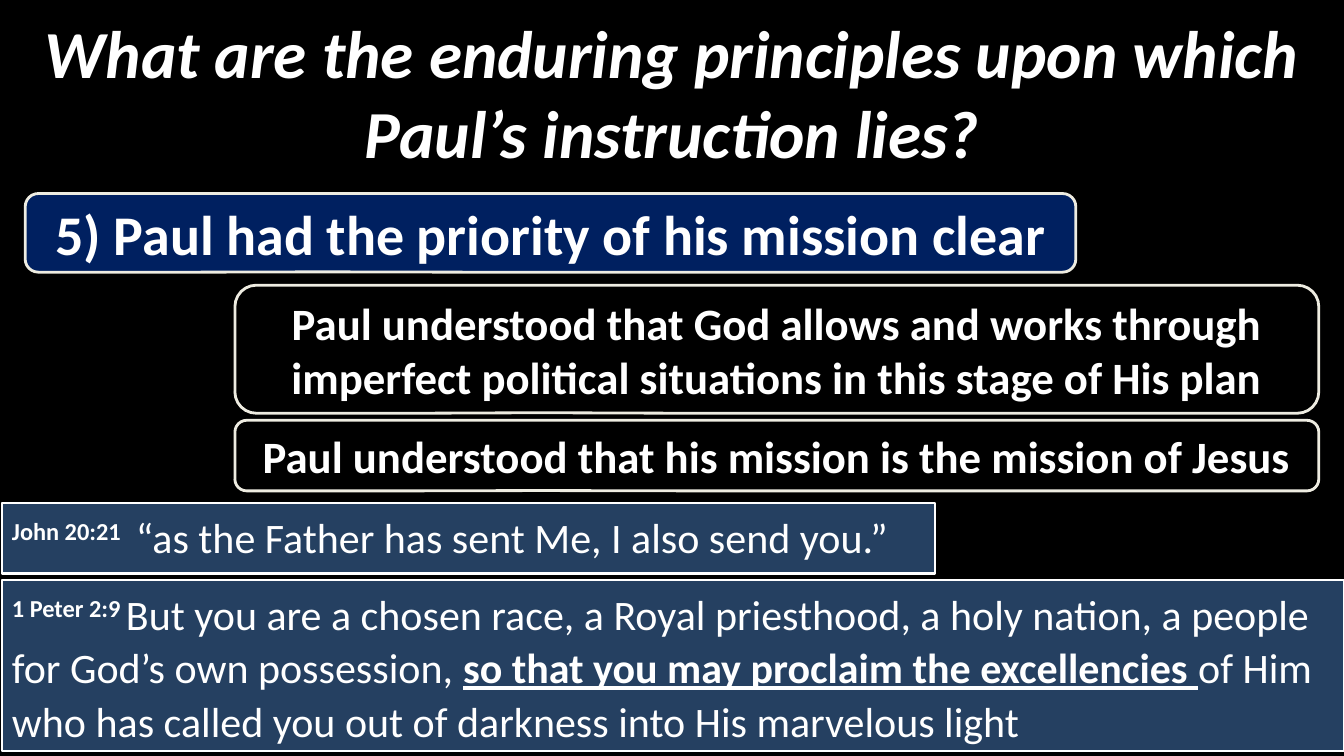
from dataclasses import dataclass

from lxml import etree
from pptx import Presentation
from pptx.dml.color import RGBColor
from pptx.enum.shapes import MSO_SHAPE
from pptx.enum.text import MSO_ANCHOR, PP_ALIGN
from pptx.oxml.ns import qn
from pptx.util import Inches, Pt

CALLOUT = MSO_SHAPE.ROUNDED_RECTANGULAR_CALLOUT
RECTANGLE = MSO_SHAPE.RECTANGLE
MIDDLE, TOP = MSO_ANCHOR.MIDDLE, MSO_ANCHOR.TOP
CENTER, LEFT = PP_ALIGN.CENTER, PP_ALIGN.LEFT


@dataclass(frozen=True)
class Theme:
    """Colours, font and type sizes of the slide."""
    font: str = "Calibri"
    black: RGBColor = RGBColor(0, 0, 0)
    white: RGBColor = RGBColor(255, 255, 255)
    navy: RGBColor = RGBColor(0x00, 0x20, 0x60)
    slate: RGBColor = RGBColor(0x25, 0x40, 0x61)
    cream: RGBColor = RGBColor(0xEE, 0xEC, 0xE1)
    title_size: int = 48
    principle_size: int = 40
    point_size: int = 32
    verse_size: int = 30


THEME = Theme()


def style_paragraph(paragraph, size, align):
    """Give a paragraph the theme font, white colour, size and alignment."""
    paragraph.alignment = align
    paragraph.font.name = THEME.font
    paragraph.font.size = Pt(size)
    paragraph.font.color.rgb = THEME.white


def add_panel(slide, kind, box, fill, line, line_width):
    """Add a filled, outlined shape without shadow."""
    panel = slide.shapes.add_shape(kind, *map(Inches, box))
    panel.shadow.inherit = False
    panel.fill.solid()
    panel.fill.fore_color.rgb = fill
    panel.line.color.rgb = line
    panel.line.width = Pt(line_width)
    panel.text_frame.word_wrap = True
    return panel


def add_title(slide, box, wording):
    """Add the bold italic question at the top."""
    frame = slide.shapes.add_textbox(*map(Inches, box)).text_frame
    frame.word_wrap = True
    frame.vertical_anchor = MIDDLE
    question = frame.paragraphs[0]
    question.text = wording
    style_paragraph(question, THEME.title_size, CENTER)
    question.font.bold = question.font.italic = True


def add_statement(slide, box, wording, size, fill, opacity=100):
    """Add a rounded callout with one bold centred statement."""
    callout = add_panel(slide, CALLOUT, box, fill, THEME.cream, 2)
    for index, value in enumerate((-0.219, 0.496, 0.167)):
        callout.adjustments[index] = value
    if opacity < 100:
        color = callout.fill._xPr.find(qn("a:solidFill"))[0]
        etree.SubElement(color, qn("a:alpha"), val=str(opacity * 1000))
    callout.text_frame.vertical_anchor = MIDDLE
    statement = callout.text_frame.paragraphs[0]
    statement.text = wording
    style_paragraph(statement, size, CENTER)
    statement.font.bold = True


def add_verse(slide, box, reference, passages):
    """Add a verse with a raised reference; passages are (wording, stressed) pairs."""
    panel = add_panel(slide, RECTANGLE, box, THEME.slate, THEME.white, 1.5)
    panel.text_frame.vertical_anchor = TOP
    verse = panel.text_frame.paragraphs[0]
    style_paragraph(verse, THEME.verse_size, LEFT)
    verse.line_spacing = 1.07
    citation = verse.add_run()
    citation.text = reference
    citation.font.bold = True
    citation.font._element.set("baseline", "30000")
    for wording, stressed in passages:
        passage = verse.add_run()
        passage.text = wording
        passage.font.bold = passage.font.underline = stressed


def build_slide(slide):
    """Place the title, the principle, its points and the verses."""
    slide.background.fill.solid()
    slide.background.fill.fore_color.rgb = THEME.black
    add_title(slide, (0, 0.42, 13.33, 0.98),
              "What are the enduring principles upon which Paul’s instruction lies?")
    add_statement(slide, (0.25, 1.92, 10.42, 0.78),
                  "5) Paul had the priority of his mission clear",
                  THEME.principle_size, THEME.navy)
    points = (
        (2.83, 1.27, "Paul understood that God allows and works through "
                     "imperfect political situations in this stage of His plan"),
        (4.17, 0.7, "Paul understood that his mission is the mission of Jesus"),
    )
    for top, height, wording in points:
        add_statement(slide, (2.33, top, 10.75, height), wording,
                      THEME.point_size, THEME.black, opacity=70)
    add_verse(slide, (0.02, 4.99, 9.25, 0.7), "John 20:21 ",
              ((" “as the Father has sent Me, I also send you.” ", False),))
    add_verse(slide, (0.02, 5.75, 13.31, 1.7), "1 Peter 2:9 ", (
        ("But you are a chosen race, a Royal priesthood, a holy nation, "
         "a people for God’s own possession, ", False),
        ("so that you may proclaim the excellencies ", True),
        ("of Him who has called you out of darkness into His marvelous light", False),
    ))


def main():
    """Build and save the presentation."""
    deck = Presentation()
    deck.slide_width, deck.slide_height = Inches(13.33), Inches(7.5)
    build_slide(deck.slides.add_slide(deck.slide_layouts[6]))
    deck.save("out.pptx")


if __name__ == "__main__":
    main()
